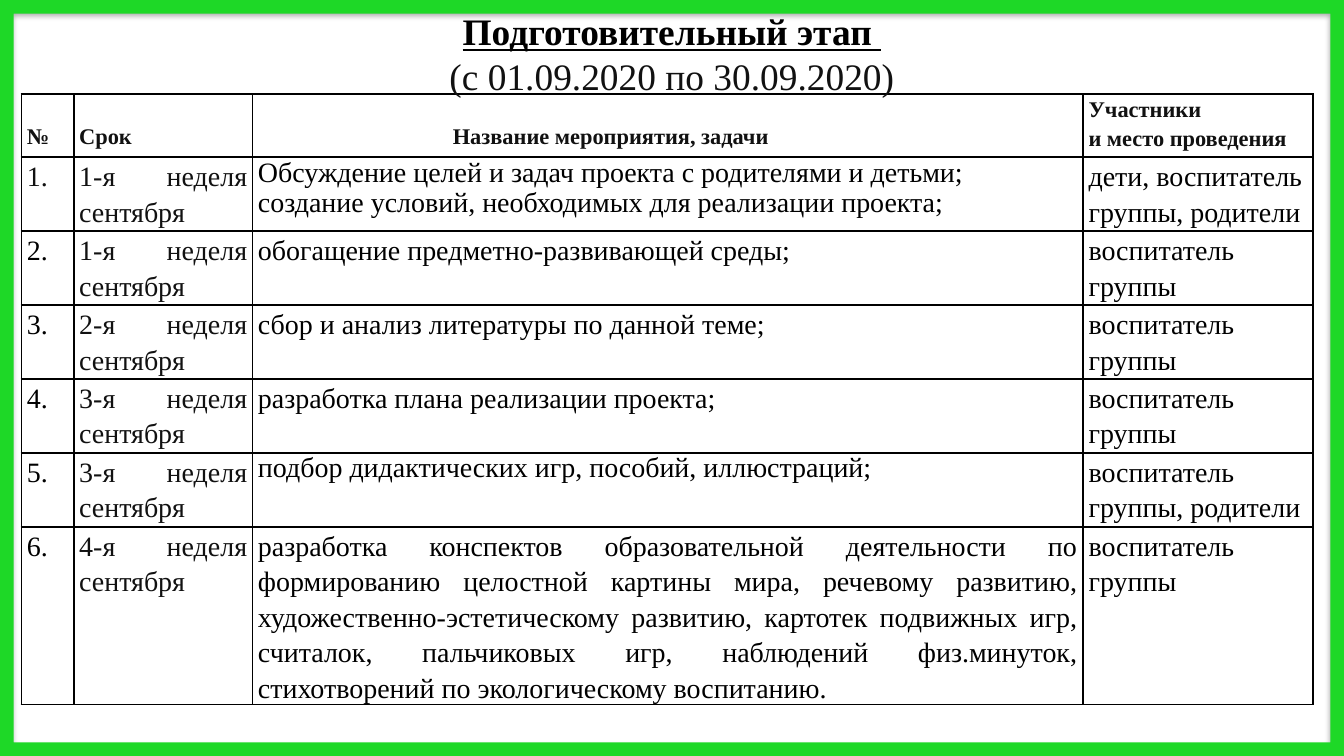
from lxml import etree
from pptx import Presentation
from pptx import util as u
from pptx.dml.color import RGBColor
from pptx.enum import shapes, text
from pptx.oxml import parse_xml
from pptx.oxml.ns import nsdecls, qn

FONT = "Times New Roman"
BLACK, DARK, GREEN = "000000", "111111", "1ED827"
JUSTIFY = text.PP_ALIGN.JUSTIFY

COLUMNS = [0.39, 1.33, 6.18, 1.71]
ROWS = [0.47] + [0.55] * 5 + [1.32]
HEADER = ["№", "Срок", "Название мероприятия, задачи", "Участники\nи место проведения"]
TEACHER = "воспитатель\nгруппы"
PARENTS = "группы, родители"

# Week of September, activity, participants
STEPS = [
    (1, "Обсуждение целей и задач проекта с родителями и детьми;\n"
        "создание условий, необходимых для реализации проекта;",
     "дети, воспитатель\n" + PARENTS),
    (1, "обогащение предметно-развивающей среды;", TEACHER),
    (2, "сбор и анализ литературы по данной теме;", TEACHER),
    (3, "разработка плана реализации проекта;", TEACHER),
    (3, "подбор дидактических игр, пособий, иллюстраций;", "воспитатель\n" + PARENTS),
    (4, "разработка конспектов образовательной деятельности по формированию "
        "целостной картины мира, речевому развитию, художественно-эстетическому "
        "развитию, картотек подвижных игр, считалок, пальчиковых игр, наблюдений "
        "физ.минуток, стихотворений по экологическому воспитанию.", TEACHER),
]
SINGLE_SPACED = (1, 5)  # table rows whose activity is set left, without extra leading


def color(value):
    return RGBColor.from_string(value)


def set_all(target, values):
    for name, value in values.items():
        setattr(target, name, value)


def write_line(para, words, ink, font, layout):
    set_all(para, layout)
    span = para.add_run()
    span.text = words
    set_all(span.font, {"name": FONT, **font})
    span.font.color.rgb = color(ink)


def add_frame(page, size):
    frame = page.shapes.add_shape(shapes.MSO_SHAPE.FRAME, 0, 0, *size)
    frame.adjustments[0] = 0.018
    frame.fill.solid()
    frame.fill.fore_color.rgb = color(GREEN)
    frame.line.fill.background()
    # Soft shadow falling downwards
    frame._element.spPr.append(parse_xml(
        f'<a:effectLst {nsdecls("a")}><a:outerShdw blurRad="{u.Pt(3.1)}" '
        f'dist="{u.Pt(1.8)}" dir="5400000" algn="t" rotWithShape="0">'
        f'<a:srgbClr val="{BLACK}"><a:alpha val="35000"/></a:srgbClr>'
        '</a:outerShdw></a:effectLst>'))


def add_title(page):
    title = page.shapes.title
    set_all(title, {"left": 0, "top": u.Inches(0.01),
                    "width": u.Inches(10), "height": u.Inches(0.77)})
    box = title.text_frame
    set_all(box, {"word_wrap": True, "vertical_anchor": text.MSO_ANCHOR.MIDDLE,
                  "auto_size": text.MSO_AUTO_SIZE.SHAPE_TO_FIT_TEXT})
    layout = {"alignment": text.PP_ALIGN.CENTER}
    write_line(box.paragraphs[0], "Подготовительный этап ", BLACK,
               {"size": u.Pt(20), "bold": True, "underline": True}, layout)
    write_line(box.add_paragraph(), "(с 01.09.2020 по 30.09.2020)", DARK,
               {"size": u.Pt(20), "bold": False, "underline": False}, layout)
    page.shapes._spTree.append(title._element)  # title stays in front


def add_borders(cell):
    properties = cell._tc.get_or_add_tcPr()
    for side in ("lnL", "lnR", "lnT", "lnB"):
        line = etree.SubElement(properties, qn("a:" + side), w=str(u.Pt(1)))
        fill = etree.SubElement(line, qn("a:solidFill"))
        etree.SubElement(fill, qn("a:srgbClr"), val=BLACK)


def fill_cell(cell, words, ink, font, layout, **margins):
    add_borders(cell)
    cell.fill.background()
    set_all(cell, {"margin_left": u.Inches(0.04), "margin_right": u.Inches(0.04),
                   "margin_top": 0, "margin_bottom": 0, **margins})
    box = cell.text_frame
    for index, line in enumerate(words.split("\n")):
        para = box.add_paragraph() if index else box.paragraphs[0]
        write_line(para, line, ink, font, layout)


def add_plan(page):
    table = page.shapes.add_table(
        len(ROWS), len(COLUMNS), u.Inches(0.16), u.Inches(0.7),
        u.Inches(sum(COLUMNS)), u.Inches(sum(ROWS))).table
    set_all(table, {"first_row": False, "horz_banding": False})
    for column, width in zip(table.columns, COLUMNS):
        column.width = u.Inches(width)
    for row, height in zip(table.rows, ROWS):
        row.height = u.Inches(height)

    spaced = {"alignment": JUSTIFY, "line_spacing": 1.15}
    # Header: the one-line headings sit near the bottom edge
    for c, words in enumerate(HEADER):
        margins = {}
        if "\n" not in words:
            margins = {"vertical_anchor": text.MSO_ANCHOR.BOTTOM,
                       "margin_bottom": u.Inches(0.06)}
        if c == 2:
            margins["margin_left"] = u.Inches(1.49)
        fill_cell(table.cell(0, c), words, DARK,
                  {"size": u.Pt(12), "bold": True}, spaced, **margins)

    # Numbered steps
    for r, (week, activity, people) in enumerate(STEPS, 1):
        values = [f"{r}.", f"{week}-я неделя сентября", activity, people]
        for c, words in enumerate(values):
            plain = c == 2 and r in SINGLE_SPACED
            ink = DARK if c == 1 or r == 1 and c == 0 else BLACK
            fill_cell(table.cell(r, c), words, ink,
                      {"size": u.Pt(15), "bold": False}, {} if plain else spaced)


def main():
    deck = Presentation()
    size = u.Inches(10), u.Inches(10 * 9 / 16)
    deck.slide_width, deck.slide_height = size
    page = deck.slides.add_slide(deck.slide_layouts[5])
    add_frame(page, size)
    add_plan(page)
    add_title(page)
    deck.save("out.pptx")


if __name__ == "__main__":
    main()
